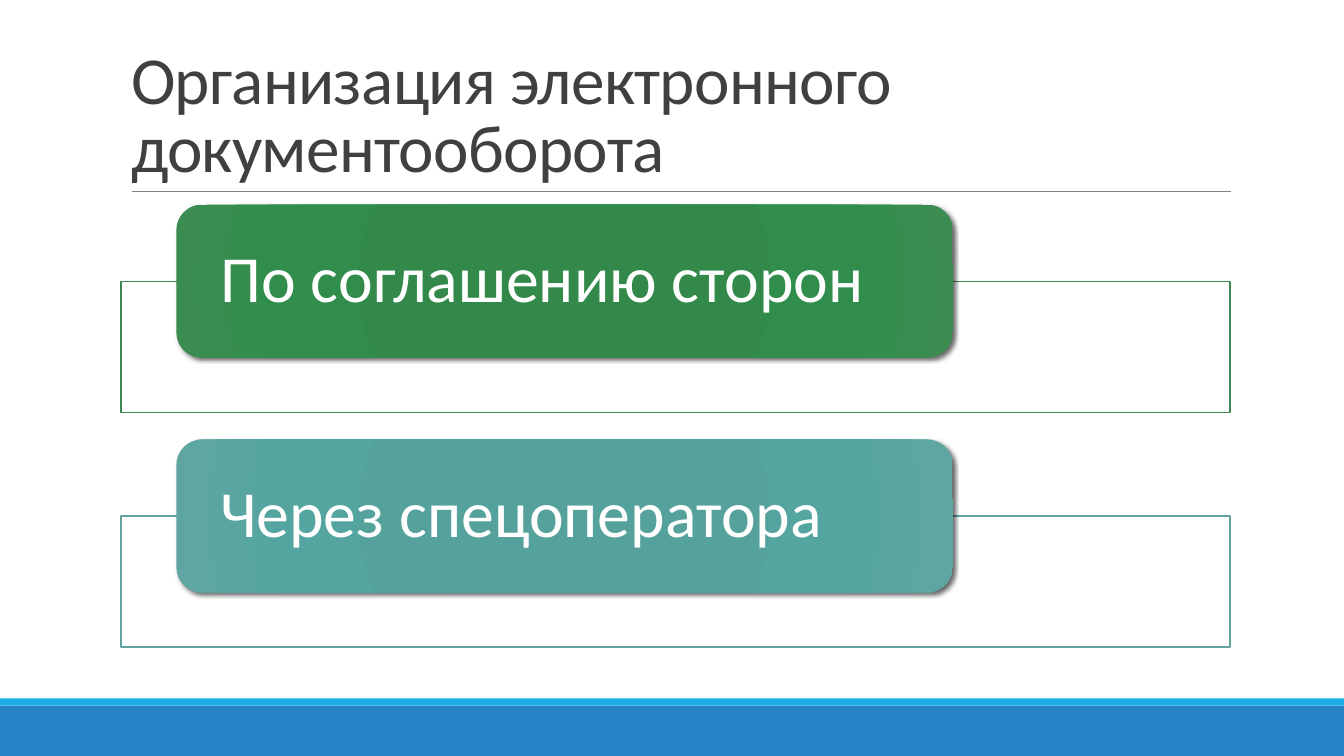
from lxml import etree
from pptx import Presentation
from pptx import util as u
from pptx.dml.color import RGBColor
from pptx.enum import shapes, text
from pptx.oxml import parse_xml
from pptx.oxml.ns import nsdecls, qn


def color(value):
    return RGBColor.from_string(value)


def add_panel(kind, left, top, width, height, fill):
    panel = page.shapes.add_shape(kind, *map(u.Inches, (left, top, width, height)))
    panel.shadow.inherit = False
    panel.fill.solid()
    panel.fill.fore_color.rgb = color(fill)
    panel.line.fill.background()
    return panel


WIDTH, HEIGHT = 13.33, 7.5
LEFT, CONTENT_WIDTH = 1.2, 11
FIRST_TOP, ROW_STEP = 2.03, 2.33
LABEL_HEIGHT, FRAME_HEIGHT = 1.52, 1.3
RECT = shapes.MSO_SHAPE.RECTANGLE

deck = Presentation()
deck.slide_width, deck.slide_height = u.Inches(WIDTH), u.Inches(HEIGHT)
page = deck.slides.add_slide(deck.slide_layouts[5])

add_panel(RECT, 0, 7, WIDTH, 0.5, "2683C6")
add_panel(RECT, 0, 6.93, WIDTH, 0.07, "1CADE4")

rule = page.shapes.add_connector(
    shapes.MSO_CONNECTOR.STRAIGHT, *map(u.Inches, (1.31, 1.9, 12.21, 1.9)))
rule.line.color.rgb = color("808080")
rule.line.width = u.Pt(0.5)
etree.SubElement(rule._element.spPr, qn("a:effectLst"))

title = page.shapes.title
title.left, title.top, title.width, title.height = map(
    u.Inches, (LEFT, 0.31, CONTENT_WIDTH, 1.59))
title.text_frame.text = "Организация электронного документооборота"
title.text_frame.word_wrap = True
title.text_frame.auto_size = text.MSO_AUTO_SIZE.NONE
title.text_frame.vertical_anchor = text.MSO_ANCHOR.BOTTOM
para = title.text_frame.paragraphs[0]
para.alignment = text.PP_ALIGN.LEFT
para.line_spacing = 0.85
span = para.runs[0]
span.font.name, span.font.size = "Calibri", u.Pt(48)
span.font.color.rgb = color("404040")
span.font._element.set("spc", "-50")

options = [
    ("По соглашению сторон", "3E8853", ["2F8949", "32894A", "318D4B", "3A8C51"]),
    ("Через спецоператора", "62A39F", ["52A19C", "55A19C", "54A5A0", "5FA6A2"]),
]
for row, (caption, outline, shades) in enumerate(options):
    top = FIRST_TOP + row * ROW_STEP
    frame = add_panel(RECT, LEFT, top + LABEL_HEIGHT / 2, CONTENT_WIDTH, FRAME_HEIGHT, "FFFFFF")
    frame.line.color.rgb = color(outline)
    frame.line.width = u.Pt(1)
    tint = frame._element.spPr.find(".//" + qn("a:srgbClr"))
    etree.SubElement(tint, qn("a:alpha")).set("val", "90000")

    label = add_panel(shapes.MSO_SHAPE.ROUNDED_RECTANGLE,
                      LEFT + CONTENT_WIDTH * 0.05, top, CONTENT_WIDTH * 0.7, LABEL_HEIGHT, shades[0])
    stops = "".join(
        f'<a:gs pos="{place * 1000}"><a:srgbClr val="{shade}"/></a:gs>'
        for place, shade in zip((0, 34, 70, 100), shades))
    props = label._element.spPr
    props.replace(props.find(qn("a:solidFill")), parse_xml(
        f'<a:gradFill {nsdecls("a")} rotWithShape="1"><a:gsLst>{stops}</a:gsLst><a:path path="circle">'
        '<a:fillToRect l="100000" t="100000" r="100000" b="100000"/></a:path></a:gradFill>'))
    props.find(qn("a:effectLst")).append(parse_xml(
        f'<a:outerShdw {nsdecls("a")} blurRad="{u.Pt(3)}" dist="{u.Pt(2)}" dir="2700000" rotWithShape="0">'
        '<a:srgbClr val="000000"><a:alpha val="60000"/></a:srgbClr></a:outerShdw>'))

    box = label.text_frame
    box.text = caption
    box.word_wrap = True
    box.vertical_anchor = text.MSO_ANCHOR.MIDDLE
    box.margin_left = box.margin_right = u.Inches(0.36)
    box.margin_top = box.margin_bottom = 0
    para = box.paragraphs[0]
    para.alignment = text.PP_ALIGN.LEFT
    para.line_spacing = 0.9
    span = para.runs[0]
    span.font.name, span.font.size = "Calibri", u.Pt(47)
    span.font.color.rgb = color("FFFFFF")

deck.save("out.pptx")
